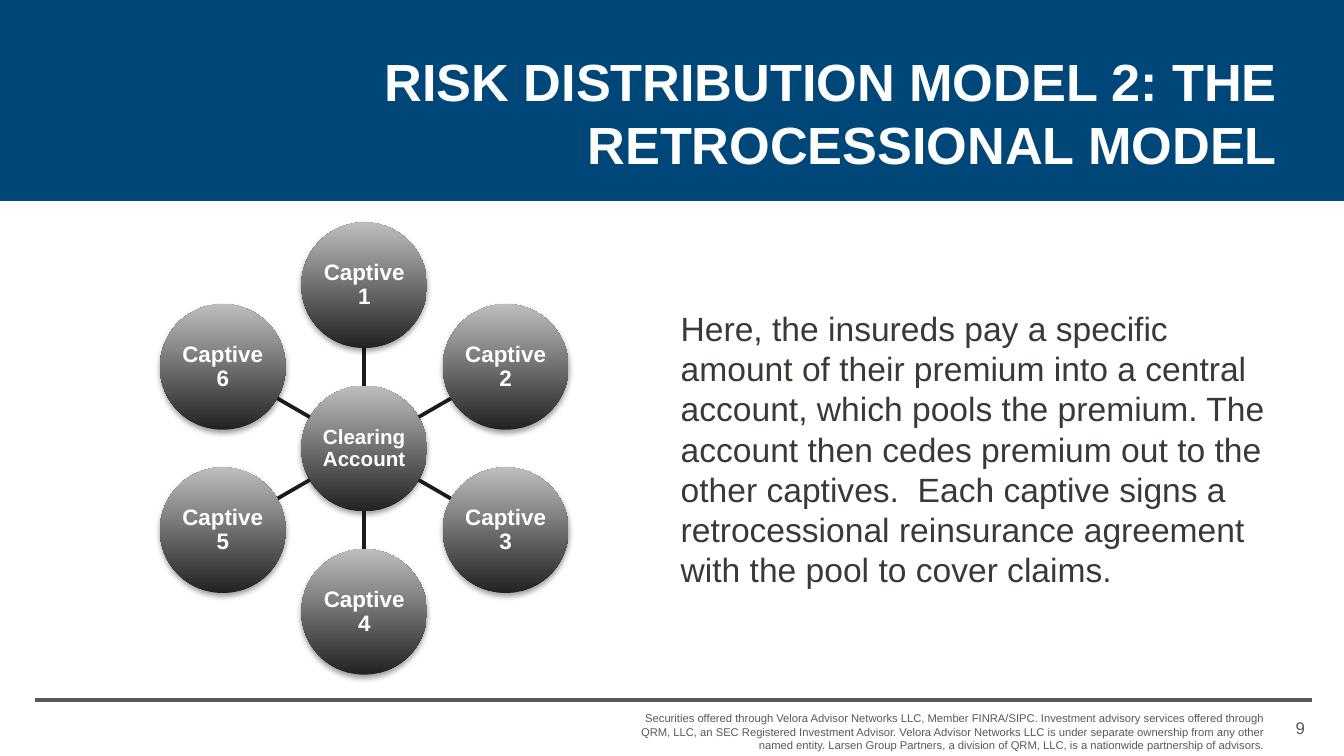
from math import cos, radians, sin

from lxml.etree import SubElement
from pptx import Presentation
from pptx.dml.color import RGBColor
from pptx.enum.shapes import MSO_CONNECTOR, MSO_SHAPE
from pptx.enum.text import MSO_ANCHOR, MSO_AUTO_SIZE, PP_ALIGN
from pptx.oxml.ns import qn
from pptx.util import Emu, Pt

EMU_PER_PX = 4572  # 200 px to the inch
FONT = "Arial"
WHITE = RGBColor(0xFF, 0xFF, 0xFF)
NAVY = RGBColor(0x00, 0x47, 0x79)
FOOTER_GRAY = RGBColor(0x58, 0x59, 0x5B)
BODY_GRAY = RGBColor(0x3A, 0x3A, 0x35)
SPOKE_BLACK = RGBColor(0x1C, 0x1B, 0x1B)
CIRCLE_DARK = RGBColor(0x23, 0x22, 0x22)
CIRCLE_LIGHT = RGBColor(0xBE, 0xBD, 0xBD)

TITLE = "RISK DISTRIBUTION MODEL 2: THE RETROCESSIONAL MODEL"
BODY = (
    "Here, the insureds pay a specific amount of their premium into a central "
    "account, which pools the premium. The account then cedes premium out to the "
    "other captives.  Each captive signs a retrocessional reinsurance agreement "
    "with the pool to cover claims."
)
DISCLOSURE = (
    "Securities offered through Velora Advisor Networks LLC, Member FINRA/SIPC. "
    "Investment advisory services offered through QRM, LLC, an SEC Registered "
    "Investment Advisor. Velora Advisor Networks LLC is under separate ownership "
    "from any other named entity. Larsen Group Partners, a division of QRM, LLC, "
    "is a nationwide partnership of advisors."
)
CAPTIVES = [f"Captive {number}" for number in range(1, 7)]


def px(length):
    return Emu(round(length * EMU_PER_PX))


def write(shape, text, size, color, align, anchor, margins=(10, 10), bold=False):
    """Fill a shape with one paragraph; margins are horizontal and vertical px."""
    frame = shape.text_frame
    frame.word_wrap = True
    frame.auto_size = MSO_AUTO_SIZE.NONE
    frame.vertical_anchor = anchor
    frame.margin_left = frame.margin_right = px(margins[0])
    frame.margin_top = frame.margin_bottom = px(margins[1])
    frame.text = text
    paragraph = frame.paragraphs[0]
    paragraph.alignment = align
    font = paragraph.runs[0].font
    font.name, font.size, font.bold = FONT, Pt(size), bold
    font.color.rgb = color
    return paragraph


def add_text(slide, box, *args, **options):
    shape = slide.shapes.add_textbox(*map(px, box))
    return write(shape, *args, **options)


def add_line(slide, start, end, color):
    line = slide.shapes.add_connector(
        MSO_CONNECTOR.STRAIGHT, *map(px, (*start, *end)))
    line.line.color.rgb = color
    line.line.width = Pt(2)
    SubElement(line._element.spPr, qn("a:effectLst"))


def add_soft_shadow(shape):
    shape.shadow.inherit = False
    effects = shape._element.spPr.find(qn("a:effectLst"))
    shadow = SubElement(effects, qn("a:outerShdw"), blurRad=str(Pt(3)),
                        dist=str(Pt(1.6)), dir="5400000", rotWithShape="0")
    color = SubElement(shadow, qn("a:srgbClr"), val="000000")
    SubElement(color, qn("a:alpha"), val="38000")


def add_circle(slide, center, diameter, label, size):
    left, top = (value - diameter / 2 for value in center)
    circle = slide.shapes.add_shape(
        MSO_SHAPE.OVAL, *map(px, (left, top, diameter, diameter)))
    circle.fill.gradient()
    circle.fill.gradient_angle = 90
    for stop, color in zip(circle.fill.gradient_stops, (CIRCLE_DARK, CIRCLE_LIGHT)):
        stop.color.rgb = color
    circle.line.fill.background()
    add_soft_shadow(circle)
    paragraph = write(circle, label, size, WHITE, PP_ALIGN.CENTER,
                      MSO_ANCHOR.MIDDLE, margins=(2, 2), bold=True)
    paragraph.line_spacing = 0.9


def add_header(slide, box):
    left, top, width, height = box
    band = slide.shapes.add_shape(MSO_SHAPE.RECTANGLE, *map(px, box))
    band.shadow.inherit = False
    band.fill.solid()
    band.fill.fore_color.rgb = NAVY
    band.line.fill.background()

    title = slide.shapes.title
    slide.shapes._spTree.append(title._element)  # bring in front of the band
    title.left, title.top = px(left + 546), px(top + 30)
    title.width, title.height = px(width - 646), px(height - 69)
    write(title, TITLE, 28, WHITE, PP_ALIGN.RIGHT, MSO_ANCHOR.BOTTOM,
          margins=(0, 0), bold=True)


def add_hub_diagram(slide, box):
    """Place the clearing account at the centre and the captives clockwise from the top."""
    left, top, width, height = box
    diameter = 187
    orbit = (height - diameter) / 2
    center = (left + width / 2, top + height / 2)

    def point(angle, radius):
        return (center[0] + radius * sin(radians(angle)),
                center[1] - radius * cos(radians(angle)))

    add_circle(slide, center, diameter, "Clearing Account", 11)
    for index, captive in enumerate(CAPTIVES):
        angle = index * 360 / len(CAPTIVES)
        add_line(slide, point(angle, diameter / 2),
                 point(angle, orbit - diameter / 2), SPOKE_BLACK)
        add_circle(slide, point(angle, orbit), diameter, captive, 12)


def add_footer(slide, box):
    left, top, width, height = box
    right = left + width
    add_line(slide, (left, top), (right, top), FOOTER_GRAY)
    add_text(slide, (right - 1056, top + 7, 1004, height - 3), DISCLOSURE, 6,
             FOOTER_GRAY, PP_ALIGN.RIGHT, MSO_ANCHOR.TOP, margins=(20, 10))
    add_text(slide, (right - 86, top + 16, 86, 50), "9", 9,
             FOOTER_GRAY, PP_ALIGN.RIGHT, MSO_ANCHOR.MIDDLE)


def main():
    presentation = Presentation()
    presentation.slide_width, presentation.slide_height = px(2000), px(1125)
    slide = presentation.slides.add_slide(presentation.slide_layouts[5])
    add_header(slide, (0, 0, 2000, 299))
    add_hub_diagram(slide, (239, 331, 606, 673))
    add_text(slide, (1003, 328, 897, 679), BODY, 18, BODY_GRAY,
             PP_ALIGN.LEFT, MSO_ANCHOR.MIDDLE)
    add_footer(slide, (52, 1042, 1900, 83))
    presentation.save("out.pptx")


if __name__ == "__main__":
    main()
